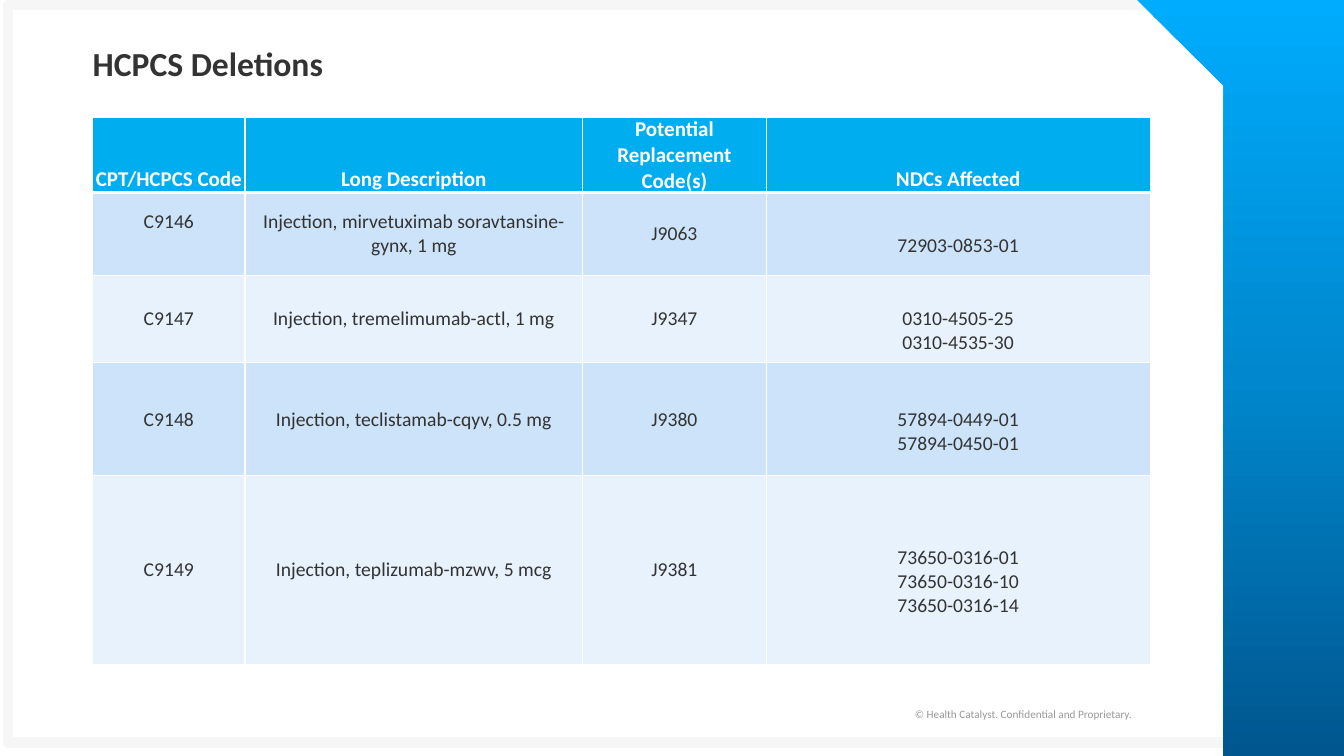
from copy import deepcopy
from dataclasses import dataclass

from lxml import etree
from pptx import Presentation
from pptx.dml.color import RGBColor
from pptx.enum.shapes import MSO_SHAPE
from pptx.enum.text import MSO_ANCHOR, PP_ALIGN
from pptx.oxml.ns import qn
from pptx.util import Inches, Pt

RECTANGLE = MSO_SHAPE.RECTANGLE
LEFT, CENTER, RIGHT = PP_ALIGN.LEFT, PP_ALIGN.CENTER, PP_ALIGN.RIGHT
MIDDLE, BOTTOM = MSO_ANCHOR.MIDDLE, MSO_ANCHOR.BOTTOM


@dataclass(frozen=True)
class Theme:
    font: str = "Calibri"
    ink: str = "333333"
    muted: str = "999999"
    paper: str = "FFFFFF"
    frame: str = "F6F6F6"
    header: str = "00AEEF"
    bands: tuple = ("CCE3F9", "E7F2FC")
    ribbon: tuple = ("00ACFD", "0087CD", "00568F")
    title_size: float = 24
    header_size: float = 15
    body_size: float = 14
    footer_size: float = 8
    frame_width: float = 7.75
    rule_width: float = 1
    header_rule_width: float = 3


def write_text(text_frame, text, *, font, size, color, bold=False,
               align=LEFT, line_spacing=None):
    """Write text into the first paragraph; newlines become line breaks."""
    paragraph = text_frame.paragraphs[0]
    paragraph.alignment = align
    if line_spacing:
        paragraph.line_spacing = line_spacing
    for index, line in enumerate(text.split("\n")):
        if index:
            paragraph.add_line_break()
        run = paragraph.add_run()
        run.text = line
        run.font.name, run.font.size, run.font.bold = font, Pt(size), bold
        run.font.color.rgb = RGBColor.from_string(color)


class SlideBuilder:
    """Places elements on a grid of 100 columns by 100 rows."""

    def __init__(self, presentation, theme):
        self.theme = theme
        self.column = presentation.slide_width / 100
        self.row = presentation.slide_height / 100
        self.slide = presentation.slides.add_slide(presentation.slide_layouts[6])

    def x(self, columns):
        return round(columns * self.column)

    def y(self, rows):
        return round(rows * self.row)

    def box(self, left, top, width, height):
        return self.x(left), self.y(top), self.x(width), self.y(height)

    def rectangle(self, *place, fill=None, line=None, line_width=0):
        shape = self.slide.shapes.add_shape(RECTANGLE, *self.box(*place))
        shape.shadow.inherit = False
        for part, color in ((shape.fill, fill), (shape.line.fill, line)):
            if color:
                part.solid()
                part.fore_color.rgb = RGBColor.from_string(color)
            else:
                part.background()
        if line:
            shape.line.width = Pt(line_width)
        return shape

    def text(self, text, *place, left_inset=0.75, **style):
        shape = self.slide.shapes.add_textbox(*self.box(*place))
        text_frame = shape.text_frame
        text_frame.word_wrap = True
        text_frame.vertical_anchor = MIDDLE
        text_frame.margin_left = self.x(left_inset)
        write_text(text_frame, text, font=self.theme.font, **style)

    def gradient_outline(self, points, colors):
        corners = [(self.x(left), self.y(top)) for left, top in points]
        builder = self.slide.shapes.build_freeform(*corners[0], scale=1.0)
        builder.add_line_segments(corners[1:], close=True)
        shape = builder.convert_to_shape()
        shape.shadow.inherit = False
        shape.line.fill.background()
        shape.fill.gradient()
        shape.fill.gradient_angle = 270
        stop_list = next(shape._element.iter(qn("a:gsLst")))
        while len(stop_list) < len(colors):
            stop_list.append(deepcopy(stop_list[-1]))
        for index, stop in enumerate(shape.fill.gradient_stops):
            stop.position = index / (len(colors) - 1)
            stop.color.rgb = RGBColor.from_string(colors[index])

    def borders(self, cell, top, bottom):
        properties = cell._tc.get_or_add_tcPr()
        side = self.theme.rule_width
        for tag, width in (("lnL", side), ("lnR", side), ("lnT", top), ("lnB", bottom)):
            line = etree.SubElement(properties, qn(f"a:{tag}"), w=str(Pt(width)))
            fill = etree.SubElement(line, qn("a:solidFill"))
            etree.SubElement(fill, qn("a:srgbClr"), val=self.theme.paper)

    def cell(self, cell, text, row, top_inset=0, bottom_inset=0):
        theme = self.theme
        is_header = row == 0
        thin, thick = theme.rule_width, theme.header_rule_width
        self.borders(cell, thick if row == 1 else thin, thick if is_header else thin)
        cell.fill.solid()
        cell.fill.fore_color.rgb = RGBColor.from_string(
            theme.header if is_header else theme.bands[(row - 1) % 2])
        cell.margin_left = cell.margin_right = 0
        cell.margin_top, cell.margin_bottom = self.y(top_inset), self.y(bottom_inset)
        cell.vertical_anchor = BOTTOM if is_header else MIDDLE
        write_text(cell.text_frame, text, font=theme.font, align=CENTER, bold=is_header,
                   size=theme.header_size if is_header else theme.body_size,
                   color=theme.paper if is_header else theme.ink)

    def table(self, left, top, widths, heights, records, insets):
        place = self.box(left, top, sum(widths), sum(heights))
        table = self.slide.shapes.add_table(len(heights), len(widths), *place).table
        table.horz_banding = False
        for column, width in zip(table.columns, widths):
            column.width = self.x(width)
        for row, height in zip(table.rows, heights):
            row.height = self.y(height)
        for row, record in enumerate(records):
            for column, text in enumerate(record):
                self.cell(table.cell(row, column), text, row,
                          **insets.get((row, column), {}))


RIBBON_CORNERS = [(84.6, 0), (100, 0), (100, 100), (91.05, 100), (91.05, 11.33)]
COLUMN_WIDTHS = [11.33, 25.13, 13.65, 28.58]
ROW_HEIGHTS = [9.87, 10.93, 11.6, 14.93, 24.93]
DELETIONS = [
    ("CPT/HCPCS Code", "Long Description", "Potential Replacement Code(s)", "NDCs Affected"),
    ("C9146", "Injection, mirvetuximab soravtansine-gynx, 1 mg", "J9063", "72903-0853-01"),
    ("C9147", "Injection, tremelimumab-actl, 1 mg", "J9347", "0310-4505-25\n0310-4535-30"),
    ("C9148", "Injection, teclistamab-cqyv, 0.5 mg", "J9380", "57894-0449-01\n57894-0450-01"),
    ("C9149", "Injection, teplizumab-mzwv, 5 mcg", "J9381",
     "73650-0316-01\n73650-0316-10\n73650-0316-14"),
]
# The drug codes sit one text line lower, the first procedure code higher
LINE_SHIFT = 3.2
CELL_INSETS = {(row, 3): {"top_inset": LINE_SHIFT} for row in range(1, len(DELETIONS))}
CELL_INSETS[1, 0] = {"bottom_inset": LINE_SHIFT}


def main():
    presentation = Presentation()
    presentation.slide_width, presentation.slide_height = Inches(13.33), Inches(7.5)
    theme = Theme()
    builder = SlideBuilder(presentation, theme)

    # Frame and ribbon
    builder.rectangle(0.6, 0.67, 98.7, 97.6, line=theme.frame, line_width=theme.frame_width)
    builder.gradient_outline(RIBBON_CORNERS, theme.ribbon)

    # Footer
    footer = builder.rectangle(66.6, 92.8, 18.38, 3.2, fill=theme.paper)
    footer.text_frame.word_wrap = True
    write_text(footer.text_frame, "© Health Catalyst. Confidential and Proprietary.",
               font=theme.font, size=theme.footer_size, color=theme.muted, align=RIGHT)

    # Title
    builder.text("HCPCS Deletions", 6.9, 5.47, 79.58, 6.4, left_inset=0,
                 size=theme.title_size, color=theme.ink, bold=True, line_spacing=0.9)

    # Table of deleted codes
    builder.table(6.9, 15.47, COLUMN_WIDTHS, ROW_HEIGHTS, DELETIONS, CELL_INSETS)

    presentation.save("out.pptx")


if __name__ == "__main__":
    main()
